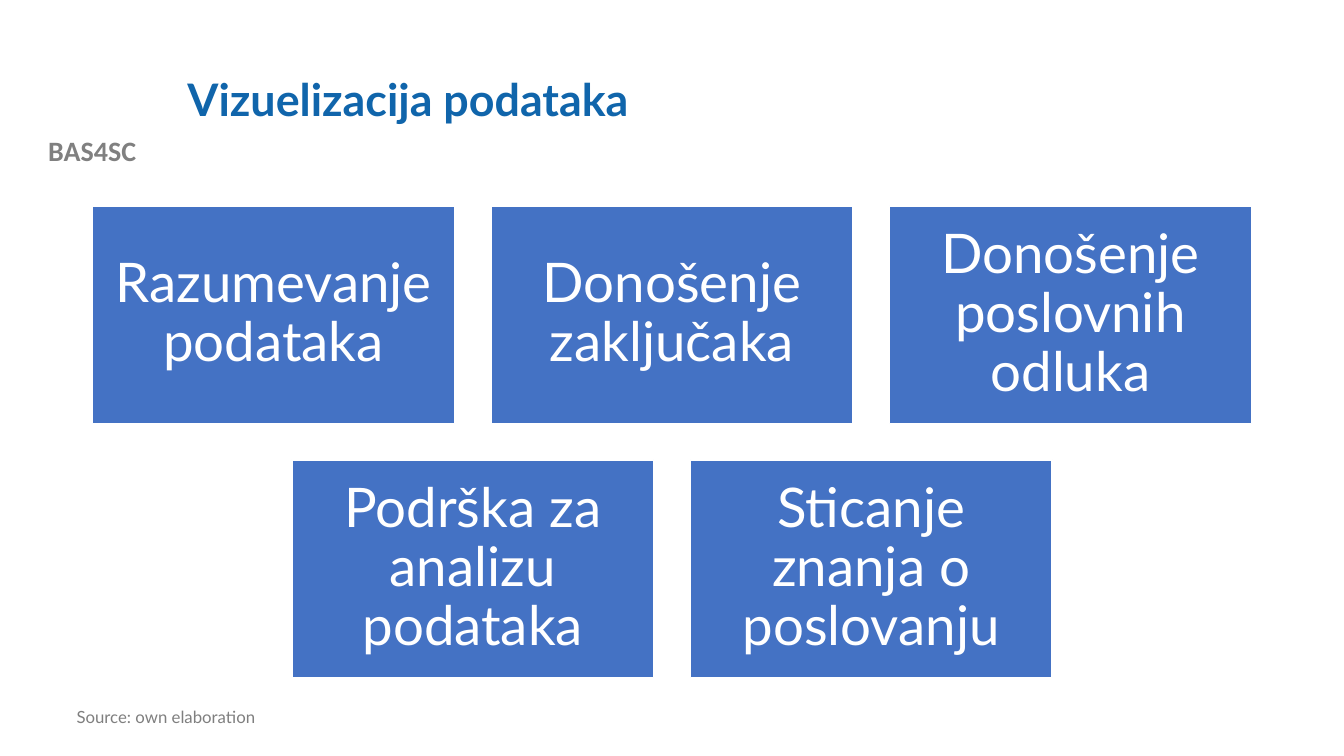
"""Build the slide on the purposes of data visualization."""
from pptx import Presentation
from pptx.dml.color import RGBColor
from pptx.enum.shapes import MSO_SHAPE
from pptx.enum.text import MSO_ANCHOR, PP_ALIGN
from pptx.util import Cm, Pt

TITLE = "Vizuelizacija podataka"
PROJECT = "BAS4SC"
SOURCE = "Source: own elaboration"
PURPOSE_ROWS = [
    ["Razumevanje podataka", "Donošenje zaključaka", "Donošenje poslovnih odluka"],
    ["Podrška za analizu podataka", "Sticanje znanja o poslovanju"],
]

SLIDE_WIDTH, SLIDE_HEIGHT = 33.87, 19.05
CARD_WIDTH, CARD_HEIGHT, CARD_GAP = 9.12, 5.48, 0.92
CARDS_TOP = 5.19
CARD_INSET = 0.41


def color(hex_code):
    return RGBColor.from_string(hex_code)


def write(frame, text, size, hex_code, font="Lato", bold=False,
          align=PP_ALIGN.LEFT, spacing=0.9):
    frame.text = text
    frame.word_wrap = True
    paragraph = frame.paragraphs[0]
    paragraph.alignment = align
    paragraph.line_spacing = spacing
    for run in paragraph.runs:
        run.font.name = font
        run.font.size = Pt(size)
        run.font.bold = bold
        run.font.color.rgb = color(hex_code)


def add_card(slide, purpose, left, top):
    card = slide.shapes.add_shape(MSO_SHAPE.RECTANGLE, Cm(left), Cm(top),
                                  Cm(CARD_WIDTH), Cm(CARD_HEIGHT))
    card.shadow.inherit = False
    card.fill.solid()
    card.fill.fore_color.rgb = color("4472C4")
    card.line.color.rgb = color("FFFFFF")
    card.line.width = Pt(1)
    frame = card.text_frame
    frame.margin_left = frame.margin_right = Cm(CARD_INSET)
    frame.margin_top = frame.margin_bottom = Cm(CARD_INSET)
    frame.vertical_anchor = MSO_ANCHOR.MIDDLE
    write(frame, purpose, 39, "FFFFFF", align=PP_ALIGN.CENTER)


def main():
    presentation = Presentation()
    presentation.slide_width = Cm(SLIDE_WIDTH)
    presentation.slide_height = Cm(SLIDE_HEIGHT)
    slide = presentation.slides.add_slide(presentation.slide_layouts[5])

    project = slide.shapes.add_textbox(Cm(0), Cm(3.25), Cm(4.65), Cm(1.12))
    write(project.text_frame, PROJECT, 20, "808080", font="Calibri", bold=True,
          align=PP_ALIGN.CENTER, spacing=1.0)

    title = slide.shapes.title
    title.left, title.top = Cm(4.47), Cm(1.02)
    title.width, title.height = Cm(27.08), Cm(3.1)
    title.text_frame.vertical_anchor = MSO_ANCHOR.MIDDLE
    write(title.text_frame, TITLE, 32, "1065AB", bold=True)

    source = slide.shapes.add_textbox(Cm(1.68), Cm(17.73), Cm(12.73), Cm(0.94))
    write(source.text_frame, SOURCE, 12, "7F7F7F")

    for row, purposes in enumerate(PURPOSE_ROWS):
        row_width = len(purposes) * (CARD_WIDTH + CARD_GAP) - CARD_GAP
        row_left = (SLIDE_WIDTH - row_width) / 2
        top = CARDS_TOP + row * (CARD_HEIGHT + CARD_GAP)
        for column, purpose in enumerate(purposes):
            add_card(slide, purpose, row_left + column * (CARD_WIDTH + CARD_GAP), top)

    presentation.save("out.pptx")


if __name__ == "__main__":
    main()
